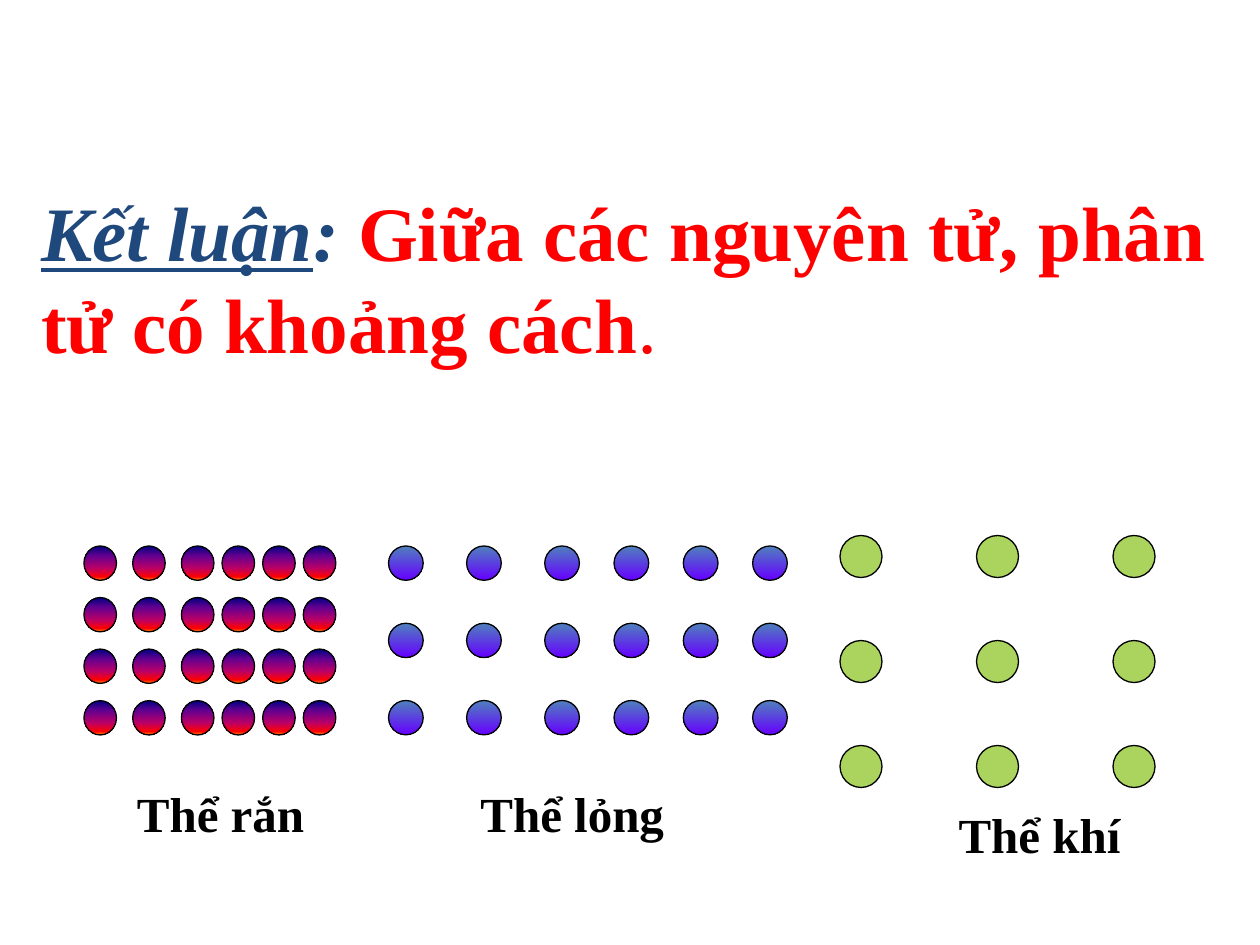
from dataclasses import dataclass
from itertools import accumulate, product

from lxml import etree
from pptx import Presentation
from pptx import util as u
from pptx.dml.color import RGBColor
from pptx.enum import shapes, text
from pptx.oxml.ns import qn

WIDTH, HEIGHT = u.Inches(10), u.Inches(7.5)
COLUMNS, ROWS = 120, 90


@dataclass(frozen=True)
class Theme:
    font: str = "Times New Roman"
    heading_size: int = 44
    label_size: int = 28
    outline_width: float = 0.75
    black: str = "000000"
    navy: str = "1F497D"
    red: str = "FF0000"
    solid: tuple = ((0, "000082"), (30, "66008F"), (65, "BA0066"),
                    (90, "FF0000"), (100, "FF8200"))
    liquid: tuple = ((0, "4F81BD"), (100, "6600FF"))
    gas: tuple = ((0, "AAD45E"),)


THEME = Theme()


@dataclass(frozen=True)
class Area:
    column: float
    row: float
    columns: float
    rows: float

    def lengths(self) -> tuple:
        return (across(self.column), down(self.row),
                across(self.columns), down(self.rows))


@dataclass(frozen=True)
class Words:
    content: str
    color: str
    size: int
    bold: bool = True
    italic: bool = False
    underline: bool = False


@dataclass(frozen=True)
class State:
    name: str
    label: Area
    first: Area
    column_steps: tuple
    row_steps: tuple
    stops: tuple


HEADING = (
    Words("Kết luận", THEME.navy, THEME.heading_size, italic=True, underline=True),
    Words(": ", THEME.navy, THEME.heading_size, italic=True),
    Words("Giữa các nguyên tử, phân tử có khoảng cách", THEME.red, THEME.heading_size),
    Words(".", THEME.red, THEME.heading_size, bold=False),
)

STATES = (
    State("Thể rắn", Area(10, 74, 22, 6.8), Area(8, 52, 3.1, 3.27),
          (4.64,) * 2 + (3.87,) * 3, (4.91,) * 3, THEME.solid),
    State("Thể lỏng", Area(43, 74, 23, 6.8), Area(37, 52, 3.3, 3.27),
          (7.44,) * 2 + (6.6,) * 3, (7.36,) * 2, THEME.liquid),
    State("Thể khí", Area(90, 76, 18, 6.8), Area(80, 51, 4, 4),
          (13,) * 2, (10,) * 2, THEME.gas),
)


def across(columns: float) -> int:
    return round(WIDTH * columns / COLUMNS)


def down(rows: float) -> int:
    return round(HEIGHT * rows / ROWS)


def apply_format(target, values: dict) -> None:
    for name, value in values.items():
        setattr(target, name, value)


def add_words(page, area: Area, pieces: tuple, alignment) -> None:
    box = page.shapes.add_textbox(*area.lengths())
    apply_format(box.text_frame, {
        "word_wrap": True,
        "auto_size": text.MSO_AUTO_SIZE.SHAPE_TO_FIT_TEXT,
    })
    para = box.text_frame.paragraphs[0]
    para.alignment = alignment
    for piece in pieces:
        span = para.add_run()
        span.text = piece.content
        apply_format(span.font, {
            "name": THEME.font,
            "size": u.Pt(piece.size),
            "bold": piece.bold,
            "italic": piece.italic,
            "underline": piece.underline,
        })
        span.font.color.rgb = RGBColor.from_string(piece.color)


def fill_stops(shape, stops: tuple) -> None:
    if len(stops) == 1:
        shape.fill.solid()
        shape.fill.fore_color.rgb = RGBColor.from_string(stops[0][1])
        return
    shape.fill.gradient()
    shape.fill.gradient_angle = 270
    stop_list = shape._element.spPr.find(".//" + qn("a:gsLst"))
    for old_stop in list(stop_list):
        stop_list.remove(old_stop)
    for percent, color in stops:
        stop = etree.SubElement(stop_list, qn("a:gs"), pos=str(percent * 1000))
        etree.SubElement(stop, qn("a:srgbClr"), val=color)


def add_particles(page, state: State) -> None:
    group = page.shapes.add_group_shape()
    first = state.first
    rows = accumulate(state.row_steps, initial=first.row)
    columns = accumulate(state.column_steps, initial=first.column)
    for row, column in product(rows, columns):
        area = Area(column, row, first.columns, first.rows)
        particle = group.shapes.add_shape(shapes.MSO_SHAPE.OVAL, *area.lengths())
        particle.shadow.inherit = False
        fill_stops(particle, state.stops)
        particle.line.color.rgb = RGBColor.from_string(THEME.black)
        particle.line.width = u.Pt(THEME.outline_width)


def main() -> None:
    deck = Presentation()
    apply_format(deck, {"slide_width": WIDTH, "slide_height": HEIGHT})
    page = deck.slides.add_slide(deck.slide_layouts.get_by_name("Blank"))
    add_words(page, Area(2.75, 17, 117.25, 19), HEADING, text.PP_ALIGN.LEFT)
    for state in STATES:
        add_particles(page, state)
    for state in STATES:
        label = Words(state.name, THEME.black, THEME.label_size)
        add_words(page, state.label, (label,), text.PP_ALIGN.CENTER)
    deck.save("out.pptx")


if __name__ == "__main__":
    main()
